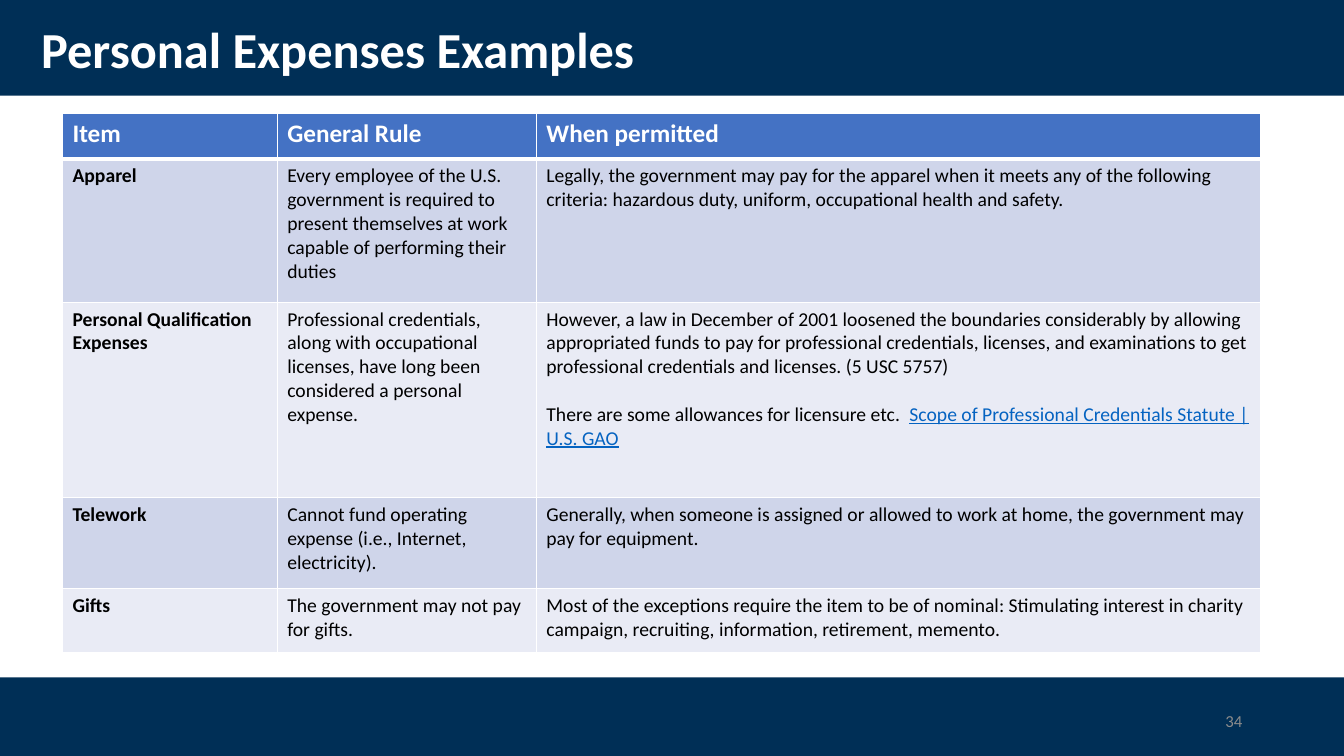
"""Build the Personal Expenses Examples slide: banded frame, title and rule table."""
from lxml.etree import SubElement
from pptx import Presentation
from pptx.dml.color import RGBColor
from pptx.enum.shapes import MSO_SHAPE as SHAPE
from pptx.enum.text import MSO_ANCHOR as ANCHOR, PP_ALIGN as ALIGN
from pptx.oxml.ns import qn
from pptx.util import Inches, Pt

NAVY = RGBColor(0x00, 0x2F, 0x56)
WHITE = RGBColor(0xFF, 0xFF, 0xFF)
BLACK = RGBColor(0x00, 0x00, 0x00)
GRAY = RGBColor(0x8C, 0x8C, 0x8C)
HEADER = RGBColor(0x44, 0x72, 0xC4)
BANDS = (RGBColor(0xE9, 0xEB, 0xF5), RGBColor(0xCF, 0xD5, 0xEA))
LINK = RGBColor(0x05, 0x63, 0xC1)
FONT = "Calibri"

WIDTH, HEIGHT = 13.33, 7.5
COLS = (2.13, 2.57, 7.18)
ROWS = (0.45, 1.42, 1.94, 0.9, 0.63)
STATUTE = "Scope of Professional Credentials Statute | U.S. GAO"
CONTENT = (
    ("Item", "General Rule", "When permitted"),
    ("Apparel",
     "Every employee of the U.S. government is required to present themselves "
     "at work capable of performing their duties",
     "Legally, the government may pay for the apparel when it meets any of the "
     "following criteria: hazardous duty, uniform, occupational health and safety."),
    ("Personal Qualification Expenses",
     "Professional credentials, along with occupational licenses, have long been "
     "considered a personal\nexpense.",
     "However, a law in December of 2001 loosened the boundaries considerably by "
     "allowing appropriated funds to pay for professional credentials, licenses, "
     "and examinations to get professional credentials and licenses. (5 USC 5757)\n"
     "There are some allowances for licensure etc.  "),
    ("Telework",
     "Cannot fund operating expense (i.e., Internet, electricity).",
     "Generally, when someone is assigned or allowed to work at home, the "
     "government may pay for equipment."),
    ("Gifts",
     "The government may not pay for gifts.",
     "Most of the exceptions require the item to be of nominal: Stimulating "
     "interest in charity campaign, recruiting, information, retirement, memento."),
)


def style(r, size, color, bold=False):
    """Set the font of one run."""
    r.font.name, r.font.size, r.font.bold = FONT, Pt(size), bold
    r.font.color.rgb = color


def add_band(s, top, height):
    """Add a navy band across the full slide width."""
    sp = s.shapes.add_shape(SHAPE.RECTANGLE, 0, Inches(top), Inches(WIDTH), Inches(height))
    sp.shadow.inherit = False
    sp.fill.solid()
    sp.fill.fore_color.rgb = NAVY
    sp.line.fill.background()


def add_label(s, box, text, size, color, bold=False, align=ALIGN.LEFT, spacing=1.0):
    """Add a single-line text box centred vertically."""
    tf = s.shapes.add_textbox(*map(Inches, box)).text_frame
    tf.word_wrap = True
    tf.vertical_anchor = ANCHOR.MIDDLE
    tf.text = text
    p = tf.paragraphs[0]
    p.alignment, p.line_spacing = align, spacing
    style(p.runs[0], size, color, bold)


def add_borders(cell, bottom):
    """Draw white borders, with the given bottom and 1 pt elsewhere."""
    tc_pr = cell._tc.get_or_add_tcPr()
    for side, width in (("L", 1), ("R", 1), ("T", 1), ("B", bottom)):
        ln = SubElement(tc_pr, qn(f"a:ln{side}"), w=str(Pt(width)))
        SubElement(SubElement(ln, qn("a:solidFill")), qn("a:srgbClr"), val=str(WHITE))


def fill_cell(cell, text, row, col):
    """Write and format one cell according to its row and column."""
    is_header = row == 0
    add_borders(cell, 3 if is_header else 1)
    cell.fill.solid()
    cell.fill.fore_color.rgb = HEADER if is_header else BANDS[row % 2]
    cell.text_frame.text = text
    size, color = (18, WHITE) if is_header else (14, BLACK)
    for p in cell.text_frame.paragraphs:
        style(p.runs[0], size, color, is_header or col == 0)


def add_rules_table(s):
    """Add the table of expenses and return it."""
    frame = s.shapes.add_table(len(ROWS), len(COLS), Inches(0.62), Inches(1.13),
                               Inches(sum(COLS)), Inches(sum(ROWS)))
    table = frame.table
    for column, width in zip(table.columns, COLS):
        column.width = Inches(width)
    for row, height in zip(table.rows, ROWS):
        row.height = Inches(height)
    for i, texts in enumerate(CONTENT):
        for j, text in enumerate(texts):
            fill_cell(table.cell(i, j), text, i, j)
    return table


def add_statute(cell):
    """Set the last paragraph apart and end it with the underlined statute."""
    p = cell.text_frame.paragraphs[-1]
    p.space_before = Pt(17)
    r = p.add_run()
    r.text = STATUTE
    style(r, 14, LINK)
    r.font.underline = True


def main():
    """Build and save the slide."""
    prs = Presentation()
    prs.slide_width, prs.slide_height = Inches(WIDTH), Inches(HEIGHT)
    s = prs.slides.add_slide(prs.slide_layouts[6])
    add_band(s, 0, 0.95)
    add_band(s, 6.72, 0.8)
    add_label(s, (0.31, 0.18, 11.5, 0.68), "Personal Expenses Examples", 36, WHITE,
              bold=True, spacing=0.9)
    table = add_rules_table(s)
    add_statute(table.cell(2, 2))
    add_label(s, (9.42, 6.95, 3, 0.4), "34", 12, GRAY, align=ALIGN.RIGHT)
    prs.save("out.pptx")


if __name__ == "__main__":
    main()
